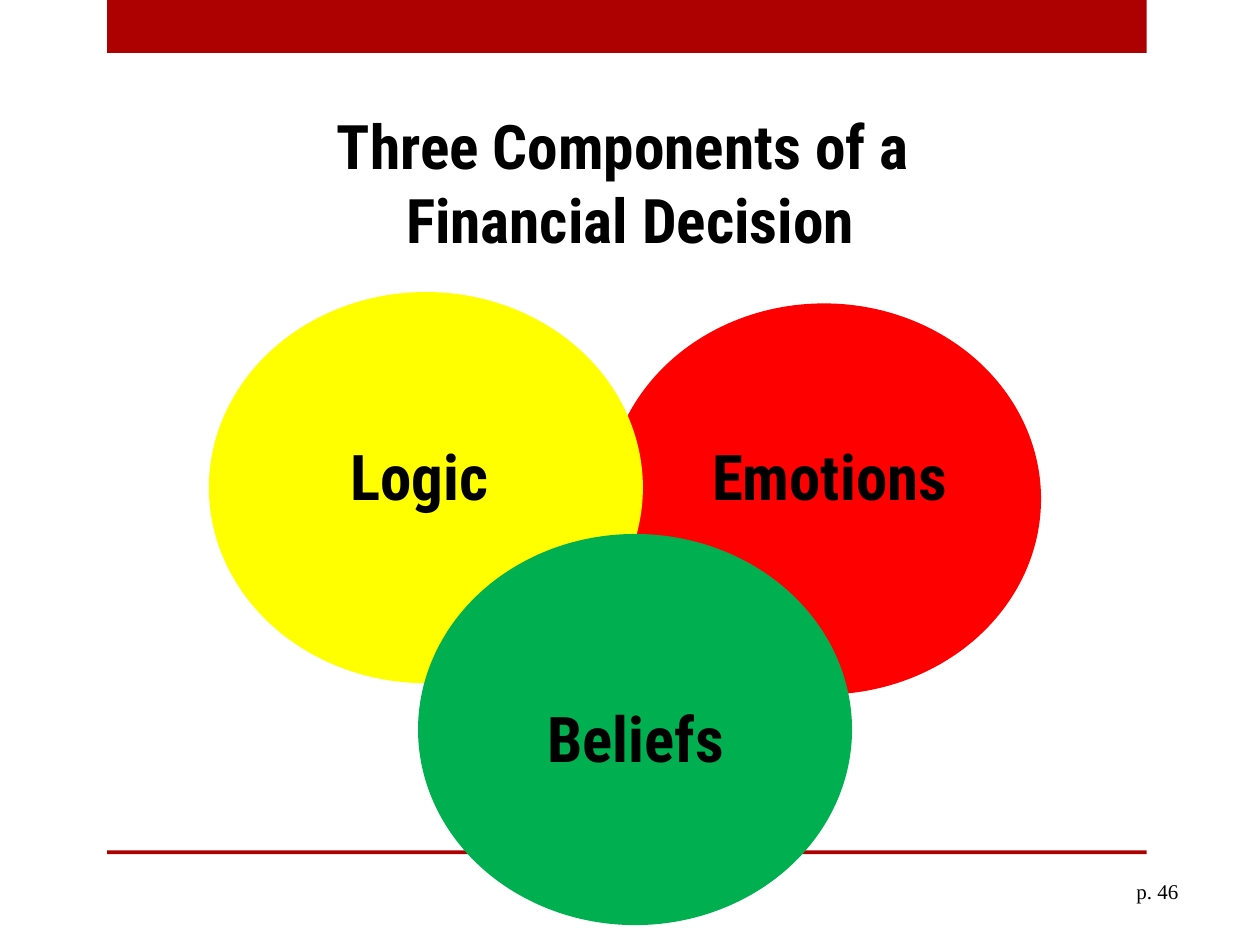
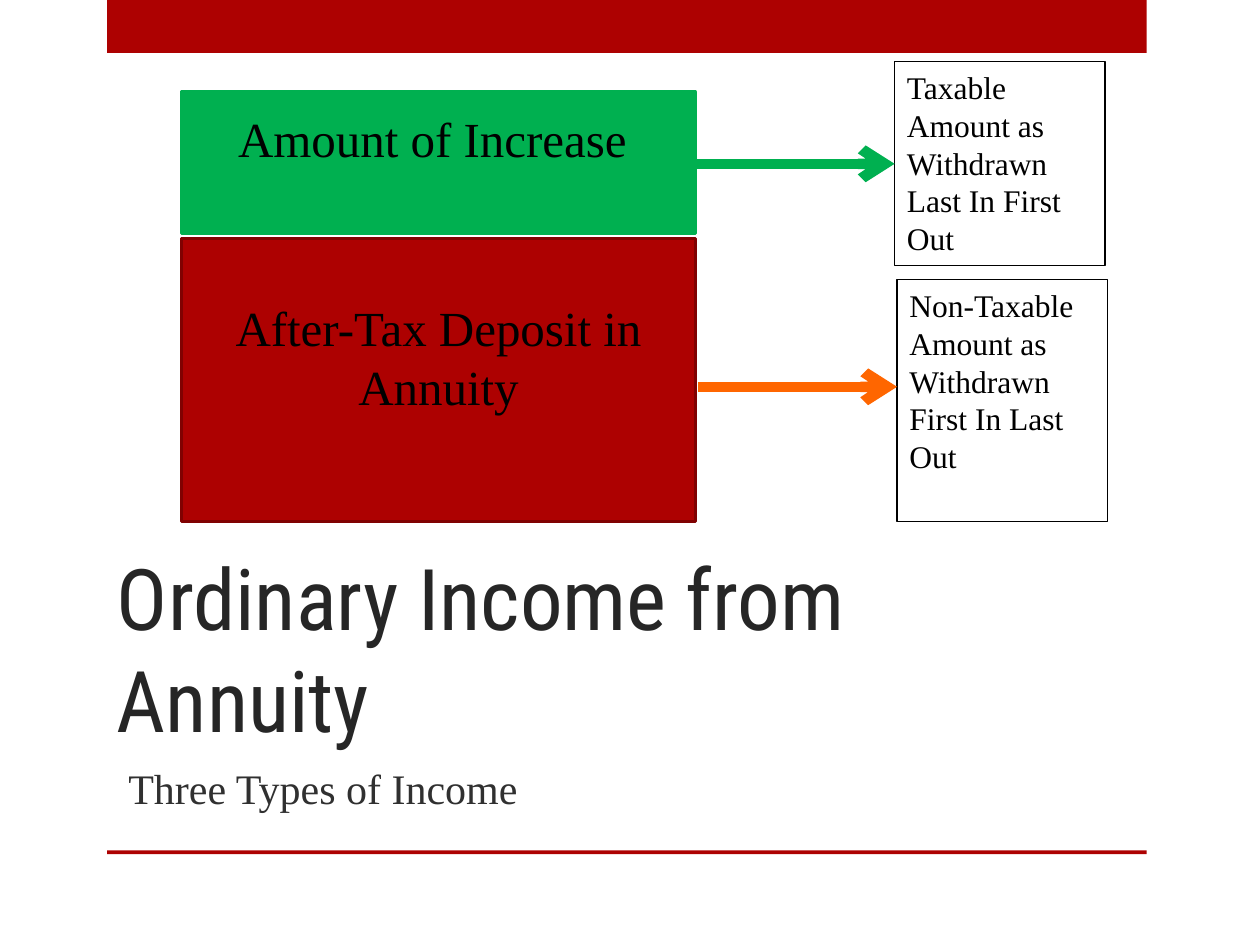
from dataclasses import dataclass, field
from typing import NamedTuple

from lxml import etree
from pptx import Presentation
from pptx import util as u
from pptx.dml.color import RGBColor
from pptx.enum import shapes, text
from pptx.oxml import ns


@dataclass(frozen=True)
class Theme:
    heading: str = "Roboto Condensed"
    body: str = "Times New Roman"
    red: str = "AD0101"
    dark_red: str = "800101"
    green: str = "00B050"
    bright_red: str = "FF0000"
    yellow: str = "FFFF00"
    orange: str = "FF6600"
    black: str = "000000"
    title_gray: str = "262626"
    body_gray: str = "303030"
    outline: float = 1.75
    thin: float = 0.75
    arrow: float = 6
    size_page: float = 12
    size_note: float = 18
    size_subtitle: float = 24
    size_block: float = 28
    size_title: float = 35.1
    size_circle: float = 36
    size_headline: float = 48.6


T = Theme()
ALIGN = text.PP_ALIGN
ANCHOR = text.MSO_ANCHOR
KIND = shapes.MSO_SHAPE


class Box(NamedTuple):
    left: float
    top: float
    width: float
    height: float

    def inches(self) -> list:
        return [u.Inches(v) for v in self]


@dataclass(frozen=True)
class Style:
    size: float
    font: str = T.body
    color: str = T.black
    bold: bool = False
    align: ALIGN = ALIGN.CENTER
    anchor: ANCHOR = ANCHOR.TOP


@dataclass(frozen=True)
class Circle:
    label: str
    color: str
    left: float
    top: float
    label_box: Box


@dataclass(frozen=True)
class Portion:
    fill: str
    border: str
    box: Box
    text_box: Box
    lines: list = field(default_factory=list)


@dataclass(frozen=True)
class Outcome:
    box: Box
    lines: list
    arrow_color: str
    arrow_y: float


CIRCLE_LABEL = Style(T.size_circle, T.heading, bold=True)
TITLE = Style(T.size_title, T.heading, bold=True, anchor=ANCHOR.BOTTOM)
HEADLINE = Style(T.size_headline, T.heading, T.title_gray, align=ALIGN.LEFT, anchor=ANCHOR.BOTTOM)
SUBTITLE = Style(T.size_subtitle, color=T.body_gray, align=ALIGN.LEFT, anchor=ANCHOR.MIDDLE)
BLOCK = Style(T.size_block)
NOTE = Style(T.size_note, align=ALIGN.LEFT)
PAGE = Style(T.size_page, align=ALIGN.LEFT)

BANDS = [Box(0.85, 0, 8.25, 0.42), Box(0.85, 6.75, 8.25, 0.03)]
CIRCLE_SIZE = (3.42, 3.08)
ARROW_LENGTH = 1.58

CIRCLES = [
    Circle("Emotions", T.bright_red, 4.83, 2.42, Box(5.17, 3.42, 2.83, 0.71)),
    Circle("Logic", T.yellow, 1.67, 2.33, Box(2.08, 3.42, 2.5, 0.71)),
    Circle("Beliefs", T.green, 3.33, 4.25, Box(3.42, 5.5, 3.25, 0.71)),
]
PORTIONS = [
    Portion(T.red, T.dark_red, Box(1.44, 1.89, 4.08, 2.25), Box(1.77, 2.31, 3.42, 1.51),
            ["After-Tax Deposit in ", "Annuity"]),
    Portion(T.green, T.green, Box(1.44, 0.73, 4.08, 1.12), Box(1.77, 0.81, 3.42, 1.04),
            ["Amount of Increase "]),
]
OUTCOMES = [
    Outcome(Box(7.1, 0.49, 1.67, 1.62),
            ["Taxable Amount as Withdrawn", "Last In First Out"], T.green, 1.3),
    Outcome(Box(7.12, 2.22, 1.67, 1.92),
            ["Non-Taxable Amount as Withdrawn", "First In Last Out"], T.orange, 3.07),
]


def rgb(color: str) -> RGBColor:
    return RGBColor.from_string(color)


def add_figure(s, kind, box: Box, fill: str = "", line: str = "", width: float = T.outline):
    sp = s.shapes.add_shape(kind, *box.inches())
    sp.shadow.inherit = False
    if fill:
        sp.fill.solid()
        sp.fill.fore_color.rgb = rgb(fill)
    else:
        sp.fill.background()
    if line:
        sp.line.color.rgb = rgb(line)
        sp.line.width = u.Pt(width)
    else:
        sp.line.fill.background()
    return sp


def write(tf, lines: list, style: Style) -> None:
    tf.word_wrap = True
    tf.vertical_anchor = style.anchor
    for i, line in enumerate(lines):
        p = tf.add_paragraph() if i else tf.paragraphs[0]
        p.alignment = style.align
        for j, part in enumerate(line.split("\n")):
            if j:
                p.add_line_break()
            r = p.add_run()
            r.text = part
            r.font.name = style.font
            r.font.size = u.Pt(style.size)
            r.font.bold = style.bold
            r.font.color.rgb = rgb(style.color)


def add_text(s, box: Box, lines: list, style: Style):
    tf = s.shapes.add_textbox(*box.inches()).text_frame
    write(tf, lines, style)
    return tf


def add_arrow(s, left: float, right: float, y: float, color: str) -> None:
    cn = s.shapes.add_connector(
        shapes.MSO_CONNECTOR.STRAIGHT,
        u.Inches(left), u.Inches(y), u.Inches(right), u.Inches(y))
    cn.line.color.rgb = rgb(color)
    cn.line.width = u.Pt(T.arrow)
    etree.SubElement(cn.line._get_or_add_ln(), ns.qn("a:tailEnd"), type="arrow")
    etree.SubElement(cn._element.spPr, ns.qn("a:effectLst"))


def add_slide(prs):
    s = prs.slides.add_slide(prs.slide_layouts[6])
    for band in BANDS:
        add_figure(s, KIND.RECTANGLE, band, T.red)
    return s


def build_components(prs) -> None:
    s = add_slide(prs)
    add_text(s, Box(0, 0.83, 10, 1.25), ["Three Components of a \nFinancial Decision"], TITLE)
    for c in CIRCLES:
        add_figure(s, KIND.OVAL, Box(c.left, c.top, *CIRCLE_SIZE), c.color, c.color)
        add_text(s, c.label_box, [c.label], CIRCLE_LABEL)
    add_text(s, Box(8.92, 6.92, 0.75, 0.3), ["p. 46"], PAGE)


def build_annuity(prs) -> None:
    s = add_slide(prs)
    add_text(s, Box(0.83, 4.33, 7.42, 1.67), ["Ordinary Income from Annuity"], HEADLINE)
    tf = add_text(s, Box(0.92, 6.17, 6.58, 0.5), ["Three Types of Income"], SUBTITLE)
    tf.margin_bottom = u.Inches(0.38)
    for portion in PORTIONS:
        add_figure(s, KIND.RECTANGLE, portion.box, portion.fill, portion.border)
        add_text(s, portion.text_box, portion.lines, BLOCK)
    for o in OUTCOMES:
        sp = add_figure(s, KIND.RECTANGLE, o.box, line=T.black, width=T.thin)
        write(sp.text_frame, o.lines, NOTE)
        add_arrow(s, o.box.left - ARROW_LENGTH, o.box.left, o.arrow_y, o.arrow_color)


def main() -> None:
    prs = Presentation()
    prs.slide_width = u.Inches(10)
    prs.slide_height = u.Inches(7.5)
    build_components(prs)
    build_annuity(prs)
    prs.save("out.pptx")


if __name__ == "__main__":
    main()
